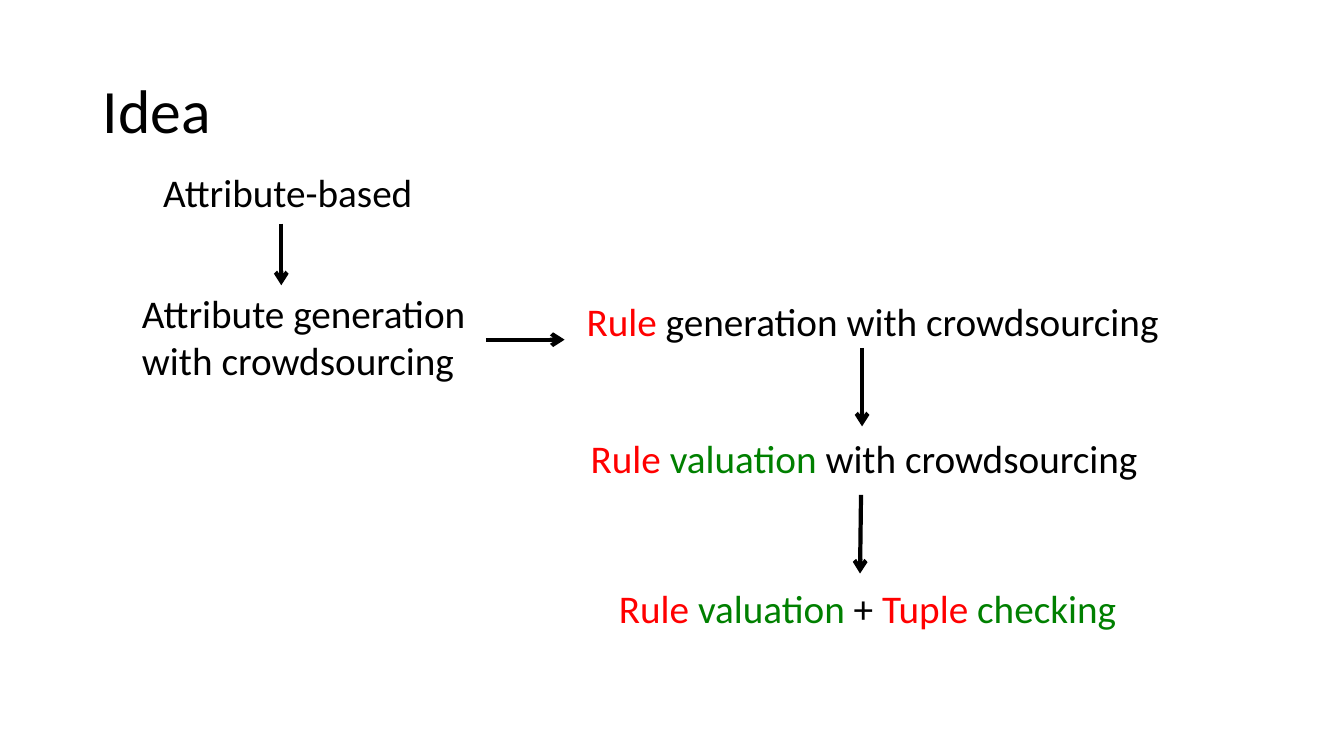
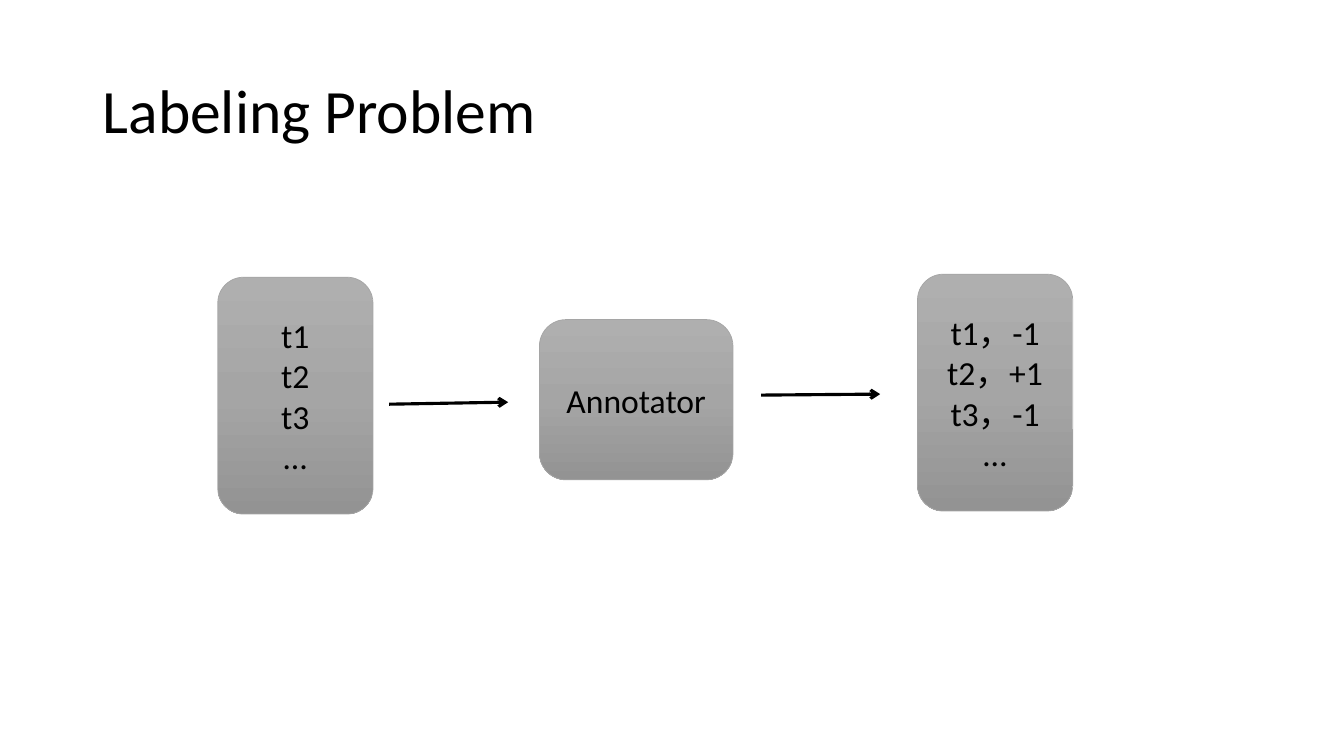
from copy import deepcopy
from pptx import Presentation
from pptx import util as u
from pptx.dml.color import RGBColor
from pptx.enum import shapes, text
from pptx.oxml import ns, xmlchemy as xc

PX = 9144  # 100 px to the inch
FONT = "Calibri"
BLACK, RED, GREEN, GREY = "000000", "FF0000", "008000", "A5A5A5"
SHADES = [(0, "AFAFAF"), (0.5, GREY), (1, "939393")]
TITLE = dict(at=(92, 40, 1150, 145), size=44, spacing=0.9)

# Each text is a list of lines, each line a list of (words, colour).
IDEA = dict(
    title="Idea",
    notes=[
        ((152, 162, 273, 57), [[("Attribute-based", BLACK)]]),
        ((131, 282, 349, 104), [[("Attribute generation", BLACK)],
                                [("with crowdsourcing", BLACK)]]),
        ((572, 290, 597, 57), [[("Rule", RED),
                                (" generation with crowdsourcing", BLACK)]]),
        ((576, 426, 572, 57), [[("Rule ", RED), ("valuation ", GREEN),
                                ("with crowdsourcing", BLACK)]]),
        ((604, 575, 523, 57), [[("Rule ", RED), ("valuation ", GREEN),
                                ("+ ", BLACK), ("Tuple ", RED),
                                ("checking", GREEN)]]),
    ],
    arrows=[(279, 222, 279, 283), (482, 337, 560, 337),
            (855, 345, 855, 423), (854, 491, 853, 569)],
    weight=3,
)
LABEL = dict(
    title="Labeling Problem",
    boxes=[
        ((216, 275, 154, 235), ["t1", "t2", "t3", "…"]),
        ((535, 317, 192, 159), ["Annotator"]),
        ((910, 272, 154, 235), ["t1，-1", "t2，+1", "t3，-1", "…"]),
    ],
    arrows=[(386, 401, 504, 399), (755, 392, 873, 391)],
    weight=2.25,
)


def px(vals):
    return [v * PX for v in vals]


def rgb(code):
    return RGBColor.from_string(code)


def write(shape, lines, size, frame, para):
    """Fill a shape with coloured lines; frame and para hold format values."""
    tf = shape.text_frame
    for key, val in frame.items():
        setattr(tf, key, val)
    for i, line in enumerate(lines):
        p = tf.add_paragraph() if i else tf.paragraphs[0]
        for key, val in para.items():
            setattr(p, key, val)
        for words, code in line:
            run = p.add_run()
            run.text = words
            run.font.name, run.font.size = FONT, u.Pt(size)
            run.font.color.rgb = rgb(code)


def add_title(slide, words):
    box = slide.shapes.add_textbox(*px(TITLE["at"]))
    write(box, [[(words, BLACK)]], TITLE["size"],
          dict(word_wrap=True, vertical_anchor=text.MSO_ANCHOR.MIDDLE),
          dict(line_spacing=TITLE["spacing"]))


def add_note(slide, at, lines):
    box = slide.shapes.add_textbox(*px(at))
    write(box, lines, 28,
          dict(word_wrap=False,
               auto_size=text.MSO_AUTO_SIZE.SHAPE_TO_FIT_TEXT), {})


def shade(shape):
    """Give a shape the three-stop vertical gradient."""
    fill = shape.fill
    fill.gradient()
    fill.gradient_angle = 270
    last = shape.element.spPr.findall(".//" + ns.qn("a:gs"))[-1]
    last.addnext(deepcopy(last))
    for stop, (pos, code) in zip(fill.gradient_stops, SHADES):
        stop.position, stop.color.rgb = pos, rgb(code)


def add_box(slide, at, rows):
    box = slide.shapes.add_shape(shapes.MSO_SHAPE.ROUNDED_RECTANGLE, *px(at))
    box.shadow.inherit = False
    shade(box)
    box.line.color.rgb, box.line.width = rgb(GREY), u.Pt(0.5)
    write(box, [[(row, BLACK)] for row in rows], 24,
          dict(word_wrap=True, vertical_anchor=text.MSO_ANCHOR.MIDDLE),
          dict(alignment=text.PP_ALIGN.CENTER))


def add_arrow(slide, ends, weight):
    arrow = slide.shapes.add_connector(shapes.MSO_CONNECTOR.STRAIGHT, *px(ends))
    arrow.line.color.rgb, arrow.line.width = rgb(BLACK), u.Pt(weight)
    props = arrow.element.spPr
    tail = xc.OxmlElement("a:tailEnd")
    tail.set("type", "arrow")
    props.find(ns.qn("a:ln")).append(tail)
    props.append(xc.OxmlElement("a:effectLst"))


def main():
    deck = Presentation()
    deck.slide_width, deck.slide_height = px((1333, 750))
    for page in (IDEA, LABEL):
        slide = deck.slides.add_slide(deck.slide_layouts[6])
        add_title(slide, page["title"])
        for at, lines in page.get("notes", []):
            add_note(slide, at, lines)
        for at, rows in page.get("boxes", []):
            add_box(slide, at, rows)
        for ends in page["arrows"]:
            add_arrow(slide, ends, page["weight"])
    deck.save("out.pptx")


if __name__ == "__main__":
    main()
